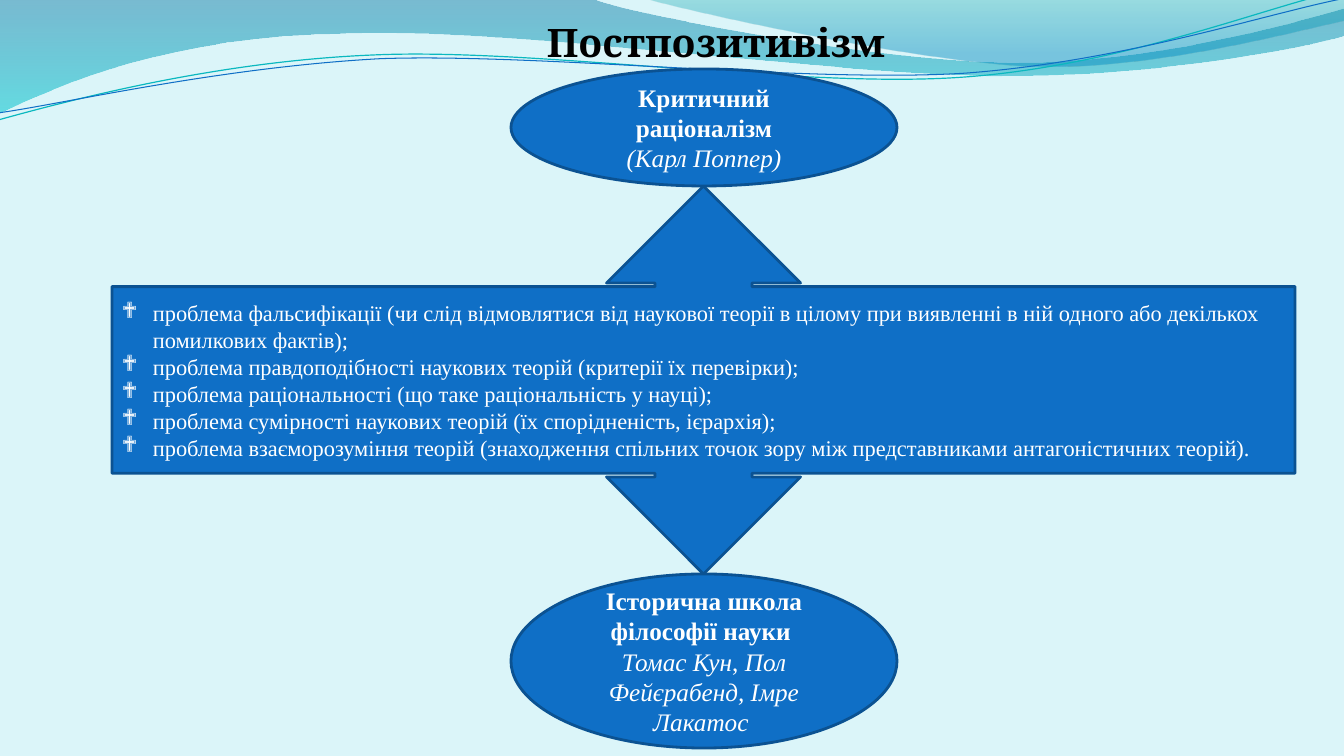
from lxml.etree import SubElement
from pptx import Presentation
from pptx.dml.color import RGBColor
from pptx.enum.shapes import MSO_SHAPE
from pptx.enum.text import MSO_ANCHOR, MSO_AUTO_SIZE, PP_ALIGN
from pptx.oxml.ns import qn
from pptx.util import Pt

SCALE = 914400 / 100.8
COLORS = {
    "background": "DBF5F9", "title": "000000", "text": "FFFFFF",
    "fill": "0F6FC6", "outline": "0B5292", "teal_line": "0AB8BF",
    "wave_top": "0074A1", "wave_bottom": "00C6CF",
    "ribbon_top": "00A1A9", "ribbon_bottom": "008BBF",
}
TITLE_FONT = {"name": "Cambria", "size": Pt(28), "bold": True, "italic": False}
LIST_FONT = {"name": "Times New Roman", "size": Pt(16)}
HEADING_FONT = {"name": "Times New Roman", "size": Pt(18), "bold": True}
PLAIN_FONT = {"name": "Times New Roman", "size": Pt(18)}
NAMES_FONT = {**PLAIN_FONT, "italic": True}

BANDS = [
    {"start": (0, 0),
     "curves": [[(592, -1)],
                [(639, 17), (892, 63), (1019, 63)],
                [(1147, 63), (1288, 26), (1344, 9)],
                [(1346, 36)],
                [(1321, 44), (1169, 77), (1002, 76)],
                [(836, 76), (513, 28), (346, 34)],
                [(173, 36), (61, 84), (-1, 114)],
                [(0, 0)]],
     "stops": [(0, "wave_top", 45), (1, "wave_bottom", 55)]},
    {"start": (644, -1),
     "curves": [[(684, 11), (916, 62), (1033, 66)],
                [(1150, 70), (1292, 32), (1344, 21)],
                [(1344, 0)],
                [(644, -1)]],
     "stops": [(0, "ribbon_top", 30), (0.8, "ribbon_bottom", 45)]},
]
STRANDS = [
    {"start": (-3, 88), "color": "teal_line", "width": 0.85,
     "curves": [[(64, 73), (213, 40), (373, 41)],
                [(532, 41), (794, 94), (957, 91)],
                [(1118, 88), (1264, 36), (1344, 22)]]},
    {"start": (-2, 81), "color": "fill", "width": 0.75,
     "curves": [[(63, 75), (220, 46), (381, 45)],
                [(541, 47), (801, 89), (962, 87)],
                [(1123, 83), (1266, 42), (1347, 30)]]},
]
STRAND_ROTATION = 357.3
PROBLEMS = [
    "проблема фальсифікації (чи слід відмовлятися від наукової теорії в цілому "
    "при виявленні в ній одного або декількох помилкових фактів);",
    "проблема правдоподібності наукових теорій (критерії їх перевірки);",
    "проблема раціональності (що таке раціональність у науці);",
    "проблема сумірності наукових теорій (їх спорідненість, ієрархія);",
    "проблема взаєморозуміння теорій (знаходження спільних точок зору між "
    "представниками антагоністичних теорій).",
]
RATIONALISM = [
    [("Критичний раціоналізм", HEADING_FONT)],
    [("(Карл Поппер)", NAMES_FONT)],
]
HISTORICAL_SCHOOL = [
    [("Історична школа філософії науки ", HEADING_FONT)],
    [("Томас Кун", NAMES_FONT), (", ", PLAIN_FONT),
     ("Пол Фейєрабенд, Імре Лакатос ", NAMES_FONT)],
]


def px(length):
    """Turn pixels into EMU."""
    return round(length * SCALE)


def color(name):
    """Look up a colour by its role."""
    return RGBColor.from_string(COLORS[name])


def apply_format(target, values):
    """Set every attribute listed in a dict of format values."""
    for name, value in values.items():
        setattr(target, name, value)


def add_outline(slide, box, start, curves, close=False):
    """Draw an outline of lines and cubic curves relative to the corner of a box."""
    left, top = box[:2]
    anchors = [(left + x, top + y) for x, y in [start, *(curve[-1] for curve in curves)]]
    builder = slide.shapes.build_freeform(*anchors[0], scale=SCALE)
    builder.add_line_segments(anchors[1:], close=close)
    shape = builder.convert_to_shape()
    shape.shadow.inherit = False
    least_x, least_y = map(min, zip(*anchors))
    segments = list(shape._element.iter(qn("a:lnTo")))
    for segment, curve in zip(segments, curves):
        if len(curve) == 3:
            segment.tag = qn("a:cubicBezTo")
            segment.clear()
            for x, y in curve:
                SubElement(segment, qn("a:pt"), x=str(left + x - least_x),
                           y=str(top + y - least_y))
    return shape


def add_waves(slide, box):
    """Draw the translucent bands and thin strands along the top."""
    for band in BANDS:
        shape = add_outline(slide, box, band["start"], band["curves"], close=True)
        shape.line.fill.background()
        shape.fill.gradient()
        shape.fill.gradient_angle = 270
        for stop, (position, name, _) in zip(shape.fill.gradient_stops, band["stops"]):
            stop.position = position
            stop.color.rgb = color(name)
        for element, (_, _, opacity) in zip(shape._element.iter(qn("a:srgbClr")), band["stops"]):
            SubElement(element, qn("a:alpha"), val=str(opacity * 1000))
    for strand in STRANDS:
        shape = add_outline(slide, box, strand["start"], strand["curves"])
        shape.rotation = STRAND_ROTATION
        shape.fill.background()
        shape.line.color.rgb = color(strand["color"])
        shape.line.width = Pt(strand["width"])


def add_title(slide, box):
    """Fill the title placeholder and bring it in front of the waves."""
    title = slide.shapes.title
    apply_format(title, dict(zip(("left", "top", "width", "height"), map(px, box))))
    slide.shapes._spTree.append(title._element)
    frame = title.text_frame
    frame.text = "Постпозитивізм"
    apply_format(frame, {"auto_size": MSO_AUTO_SIZE.NONE, "word_wrap": True,
                         "vertical_anchor": MSO_ANCHOR.TOP})
    paragraph = frame.paragraphs[0]
    paragraph.alignment = PP_ALIGN.CENTER
    apply_format(paragraph.runs[0].font, TITLE_FONT)
    paragraph.runs[0].font.color.rgb = color("title")


def add_panel(slide, kind, box, paragraphs, alignment):
    """Add a blue shape holding paragraphs of formatted runs."""
    shape = slide.shapes.add_shape(kind, *map(px, box))
    shape.shadow.inherit = False
    shape.fill.solid()
    shape.fill.fore_color.rgb = color("fill")
    shape.line.color.rgb = color("outline")
    shape.line.width = Pt(2)
    frame = shape.text_frame
    apply_format(frame, {"word_wrap": True, "vertical_anchor": MSO_ANCHOR.MIDDLE})
    for index, runs in enumerate(paragraphs):
        paragraph = frame.add_paragraph() if index else frame.paragraphs[0]
        paragraph.alignment = alignment
        for text, values in runs:
            run = paragraph.add_run()
            run.text = text
            apply_format(run.font, values)
            run.font.color.rgb = color("text")
    return shape


def add_problems(slide, box):
    """Add the two-headed callout, turned upright, with its bulleted list."""
    left, top, width, height = box
    turned = (left + (width - height) / 2, top + (height - width) / 2, height, width)
    shape = add_panel(slide, MSO_SHAPE.LEFT_RIGHT_ARROW_CALLOUT, turned,
                      [[(problem, LIST_FONT)] for problem in PROBLEMS], PP_ALIGN.LEFT)
    shape.rotation = 90
    shape.text_frame._txBody.bodyPr.set("vert", "vert270")
    for paragraph in shape.text_frame.paragraphs:
        properties = paragraph._p.get_or_add_pPr()
        properties.set("marL", str(px(31)))
        properties.set("indent", str(px(-31)))
        SubElement(properties, qn("a:buFont"), typeface="Wingdings")
        SubElement(properties, qn("a:buChar"), char="❖")


def add_school(slide, box, paragraphs):
    """Add an ellipse naming a school and its thinkers."""
    add_panel(slide, MSO_SHAPE.OVAL, box, paragraphs, PP_ALIGN.CENTER)


def main():
    """Build and save the presentation."""
    presentation = Presentation()
    apply_format(presentation, {"slide_width": px(1344), "slide_height": px(756)})
    slide = presentation.slides.add_slide(presentation.slide_layouts[5])
    slide.background.fill.solid()
    slide.background.fill.fore_color.rgb = color("background")
    add_waves(slide, (0, 0, 1344, 120))
    add_title(slide, (137, 13, 1158, 57))
    add_problems(slide, (112, 186, 1183, 388))
    add_school(slide, (511, 69, 386, 117), RATIONALISM)
    add_school(slide, (511, 574, 386, 174), HISTORICAL_SCHOOL)
    presentation.save("out.pptx")


if __name__ == "__main__":
    main()
